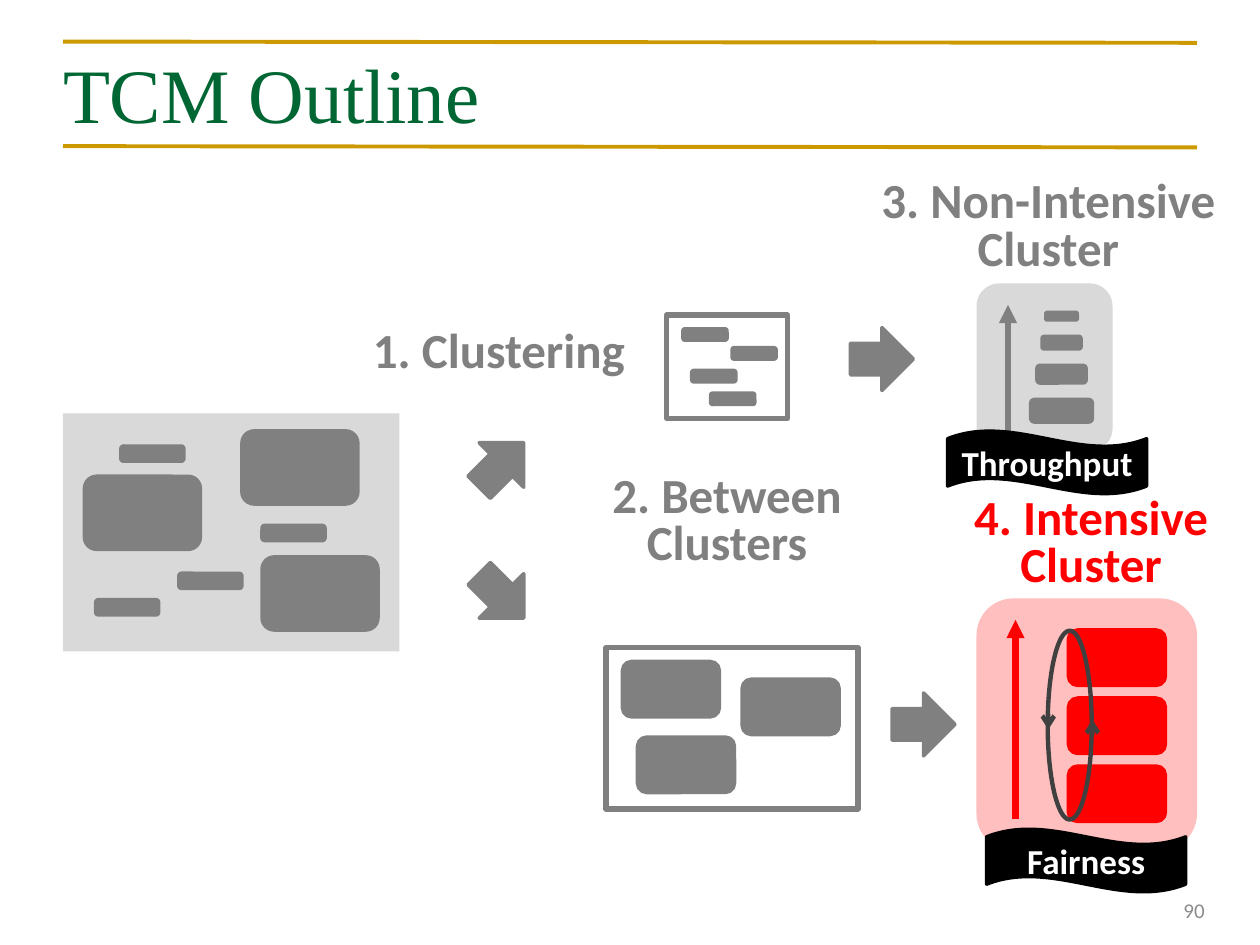
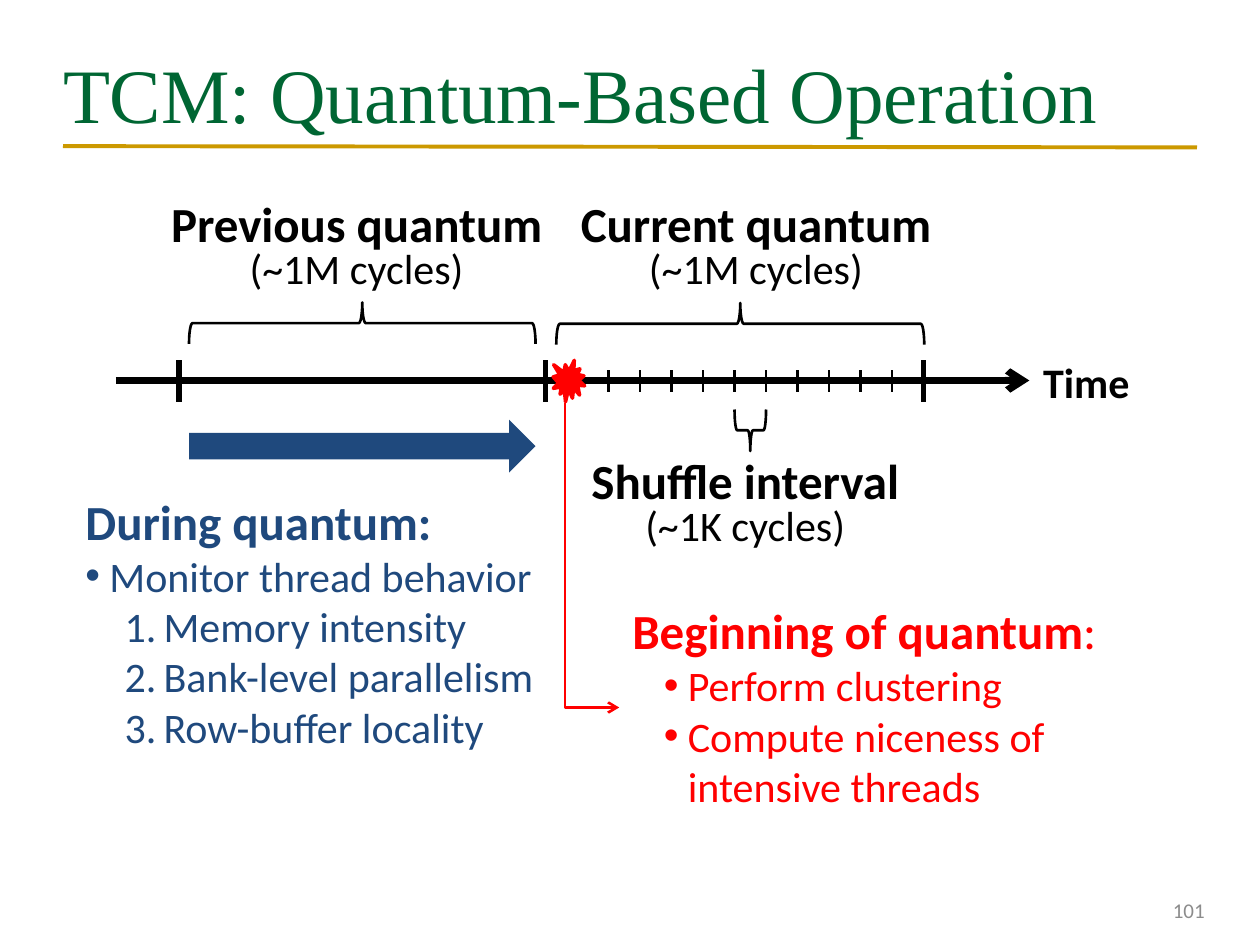
from lxml import etree
from pptx import Presentation
from pptx.dml.color import RGBColor
from pptx.enum.shapes import MSO_CONNECTOR as LINK, MSO_SHAPE as SHAPE
from pptx.enum.text import MSO_ANCHOR as ANCHOR, MSO_AUTO_SIZE as FIT, PP_ALIGN as ALIGN
from pptx.oxml.ns import qn
from pptx.util import Inches, Pt

COLORS = {
    "gold": "CC9900", "green": "006633", "number": "8C8C8C", "gray": "808080",
    "pale": "D9D9D9", "dark": "404040", "red": "FF0000", "navy": "1F497D",
    "black": "000000", "white": "FFFFFF",
}
COLORS = {name: RGBColor.from_string(value) for name, value in COLORS.items()}


def draw(page, preset, at, fill=None, line=None, width=2, turn=0):
    shape = page.shapes.add_shape(preset, *map(Inches, at))
    shape.shadow.inherit = False
    shape.rotation = turn
    if fill:
        shape.fill.solid()
        shape.fill.fore_color.rgb = COLORS[fill]
    else:
        shape.fill.background()
    if line:
        shape.line.color.rgb = COLORS[line]
        shape.line.width = Pt(width)
    else:
        shape.line.fill.background()
    return shape


def connect(page, start, end, color, width, kind=LINK.STRAIGHT, arrow=None):
    link = page.shapes.add_connector(kind, *map(Inches, (*start, *end)))
    link.line.color.rgb = COLORS[color]
    link.line.width = Pt(width)
    if arrow:
        outline = link.line._get_or_add_ln()
        etree.SubElement(outline, qn("a:tailEnd")).set("type", arrow)
    etree.SubElement(link._element.spPr, qn("a:effectLst"))
    return link


deck = Presentation()
deck.slide_width, deck.slide_height = Inches(10), Inches(7.5)
pages = []
for heading in ["TCM Outline", "TCM: Quantum-Based Operation"]:
    page = deck.slides.add_slide(deck.slide_layouts[5])
    pages.append(page)
    connect(page, (0.5, 1.16), (9.5, 1.17), "gold", 2.25)
    title = page.shapes.title
    title.left, title.top, title.width, title.height = map(Inches, (0.5, 0.3, 9, 0.87))
    frame = title.text_frame
    frame.text = heading
    frame.auto_size = FIT.NONE
    frame.vertical_anchor = ANCHOR.MIDDLE
    frame.margin_left = frame.margin_right = 0
    para = frame.paragraphs[0]
    para.alignment = ALIGN.LEFT
    font = para.runs[0].font
    font.name, font.size = "Times New Roman", Pt(44)
    font.color.rgb = COLORS["green"]
outline_page, quantum_page = pages

page = outline_page
connect(page, (0.5, 0.33), (9.5, 0.34), "gold", 2.25)
fair_cluster = draw(page, SHAPE.ROUNDED_RECTANGLE, (7.75, 4.75, 1.75, 2), "red")
tint = fair_cluster._element.spPr.find(f"{qn('a:solidFill')}/{qn('a:srgbClr')}")
etree.SubElement(tint, qn("a:alpha")).set("val", "25000")
draw(page, SHAPE.RECTANGLE, (0.5, 3.28, 2.67, 1.89), "pale")
draw(page, SHAPE.RECTANGLE, (4.81, 5.14, 2, 1.28), line="gray", width=3)
draw(page, SHAPE.RECTANGLE, (5.29, 2.5, 0.96, 0.82), line="gray", width=3)
draw(page, SHAPE.ROUNDED_RECTANGLE, (7.75, 2.25, 1.08, 1.33), "pale")

thread_groups = [
    ("gray", 0.5, 0.12, [(1.42, 4.55), (0.96, 3.54), (2.08, 4.17), (0.76, 4.76)]),
    ("gray", 0.92, 0.58, [(2.08, 4.42), (0.67, 3.78), (1.92, 3.42)]),
    ("gray", 0.77, 0.44, [(4.94, 5.25), (5.89, 5.39), (5.06, 5.85)]),
    ("gray", 0.35, 0.09, [(5.42, 2.61), (5.49, 2.94), (5.81, 2.76), (5.64, 3.12)]),
    ("gray", 0.25, 0.06, [(8.3, 2.48)]),
    ("gray", 0.31, 0.1, [(8.27, 2.67)]),
    ("gray", 0.39, 0.14, [(8.23, 2.9)]),
    ("gray", 0.49, 0.18, [(8.18, 3.17)]),
    ("red", 0.77, 0.44, [(8.48, 5 + 0.54 * row) for row in range(3)]),
]
for color, width, height, corners in thread_groups:
    for corner in corners:
        draw(page, SHAPE.ROUNDED_RECTANGLE, (*corner, width, height), color, color)

for left, top, turn in [(3.73, 3.44, 315), (3.73, 4.48, 45), (6.75, 2.6, 0), (7.08, 5.5, 0)]:
    draw(page, SHAPE.RIGHT_ARROW, (left, top, 0.5, 0.5), "gray", "gray", turn=turn)

connect(page, (8, 3.42), (8, 2.42), "gray", 3.5, arrow="triangle")
connect(page, (8.06, 6.5), (8.06, 4.92), "red", 3.5, arrow="triangle")
draw(page, SHAPE.OVAL, (7.74, 5.58, 1.5, 0.35), line="dark", width=2.5, turn=270)
connect(page, (8.32, 5.71), (8.32, 5.79), "dark", 2.5, arrow="arrow")
connect(page, (8.67, 5.79), (8.67, 5.71), "dark", 2.5, arrow="arrow")

for goal, left, top in [("Throughput", 7.52, 3.42), ("Fairness", 7.83, 6.58)]:
    banner = draw(page, SHAPE.WAVE, (left, top, 1.58, 0.5), "black", "black")
    frame = banner.text_frame
    frame.text = goal
    frame.vertical_anchor = ANCHOR.MIDDLE
    para = frame.paragraphs[0]
    para.alignment = ALIGN.CENTER
    font = para.runs[0].font
    font.name, font.size, font.bold = "Calibri", Pt(20), True
    font.color.rgb = COLORS["white"]

page = quantum_page
connect(page, (0.92, 3.02), (8.17, 3.02), "black", 4, arrow="arrow")
for x in (1.42, 4.33, 7.33):
    connect(page, (x, 2.86), (x, 3.19), "black", 3)
for step in range(10):
    x = 4.83 + 0.25 * step
    connect(page, (x, 2.94), (x, 3.11), "black", 1.5)
braces = [
    ((2.71, 1.19, 0.33, 2.75), 90),
    ((5.71, 1.11, 0.33, 2.92), 90),
    ((5.79, 3.29, 0.33, 0.25), 270),
]
for at, turn in braces:
    draw(page, SHAPE.LEFT_BRACE, at, line="black", width=1.5, turn=turn)
draw(page, SHAPE.RIGHT_ARROW, (1.5, 3.33, 2.75, 0.42), "navy")
draw(page, SHAPE.EXPLOSION1, (4.39, 2.86, 0.25, 0.33), "red", "red")
elbow = connect(page, (5.91, 4.19), (3.49, 4.62), "red", 1.5, LINK.ELBOW, "arrow")
elbow._element.spPr.find(qn("a:prstGeom")).set("prst", "bentConnector2")
elbow._element.spPr.find(qn("a:xfrm")).set("rot", str(270 * 60000))

center, left, right = ALIGN.CENTER, ALIGN.LEFT, ALIGN.RIGHT
number_at = (7.33, 7.02, 2.33, 0.4)
labels = [
    (outline_page, number_at, "number", right, [("90", 12, False)]),
    (quantum_page, number_at, "number", right, [("101", 12, False)]),
    (outline_page, (2.84, 2.58, 2.24, 0.5), "gray", center, [("1. Clustering", 28, True)]),
    (outline_page, (4.74, 3.73, 2.06, 0.87), "gray", center,
     [("2. Between", 28, True), ("Clusters", 28, True)]),
    (outline_page, (6.87, 1.39, 2.9, 0.87), "gray", center,
     [("3. Non-Intensive", 28, True), ("Cluster", 28, True)]),
    (outline_page, (7.61, 3.9, 2.1, 0.87), "red", center,
     [("4. Intensive", 28, True), ("Cluster", 28, True)]),
    (quantum_page, (8.18, 2.78, 0.9, 0.5), "black", left, [("Time", 24, True)]),
    (quantum_page, (1.17, 1.58, 3.32, 0.81), "black", center,
     [("Previous quantum", 28, True), ("(~1M cycles)", 24, False)]),
    (quantum_page, (4.5, 1.58, 3, 0.81), "black", center,
     [("Current quantum", 28, True), ("(~1M cycles)", 24, False)]),
    (quantum_page, (4.5, 3.62, 2.83, 0.81), "black", center,
     [("Shuffle interval", 28, True), ("(~1K cycles)", 24, False)]),
]
for page, at, color, alignment, lines in labels:
    box = page.shapes.add_textbox(*map(Inches, at))
    frame = box.text_frame
    frame.word_wrap = page is quantum_page or alignment == right
    if alignment == right:
        frame.vertical_anchor = ANCHOR.MIDDLE
    frame.text = "\n".join(text for text, size, bold in lines)
    for para, (text, size, bold) in zip(frame.paragraphs, lines):
        para.alignment = alignment
        if alignment == center:
            para.line_spacing = 0.8
        font = para.runs[0].font
        font.name, font.size, font.bold = "Calibri", Pt(size), bold
        font.color.rgb = COLORS[color]

phases = [
    ((0.58, 3.85, 4, 2.19), "navy", ["During quantum", ":"], True, [
        ("Monitor thread behavior", "•", 0.19, 0.19),
        ("Memory intensity", "1.", 0.62, 0.31),
        ("Bank-level parallelism", "1.", 0.62, 0.31),
        ("Row-buffer locality", "1.", 0.62, 0.31),
    ]),
    ((4.92, 4.72, 4.75, 1.78), "red", ["Beginning of quantum", ":"], False, [
        ("Perform clustering", "•", 0.44, 0.19),
        ("Compute niceness of intensive threads", "•", 0.44, 0.19),
    ]),
]
for at, color, (heading, colon), colon_bold, items in phases:
    box = quantum_page.shapes.add_textbox(*map(Inches, at))
    frame = box.text_frame
    frame.word_wrap = True
    frame.text = "\n".join([heading] + [item[0] for item in items])
    first = frame.paragraphs[0]
    first.add_run().text = colon
    for para in frame.paragraphs:
        for span in para.runs:
            span.font.name = "Calibri"
            span.font.size = Pt(28 if para is first else 24)
            span.font.color.rgb = COLORS[color]
    first.runs[0].font.bold = True
    first.runs[1].font.bold = colon_bold
    for span in first.runs:
        span.font.size = Pt(28)
    for para, (text, bullet, margin, hanging) in zip(frame.paragraphs[1:], items):
        props = para._p.get_or_add_pPr()
        props.set("marL", str(Inches(margin)))
        props.set("indent", str(-Inches(hanging)))
        if bullet == "•":
            etree.SubElement(props, qn("a:buFont")).set("typeface", "Arial")
            etree.SubElement(props, qn("a:buChar")).set("char", bullet)
        else:
            etree.SubElement(props, qn("a:buFont")).set("typeface", "Calibri")
            etree.SubElement(props, qn("a:buAutoNum")).set("type", "arabicPeriod")

deck.save("out.pptx")
